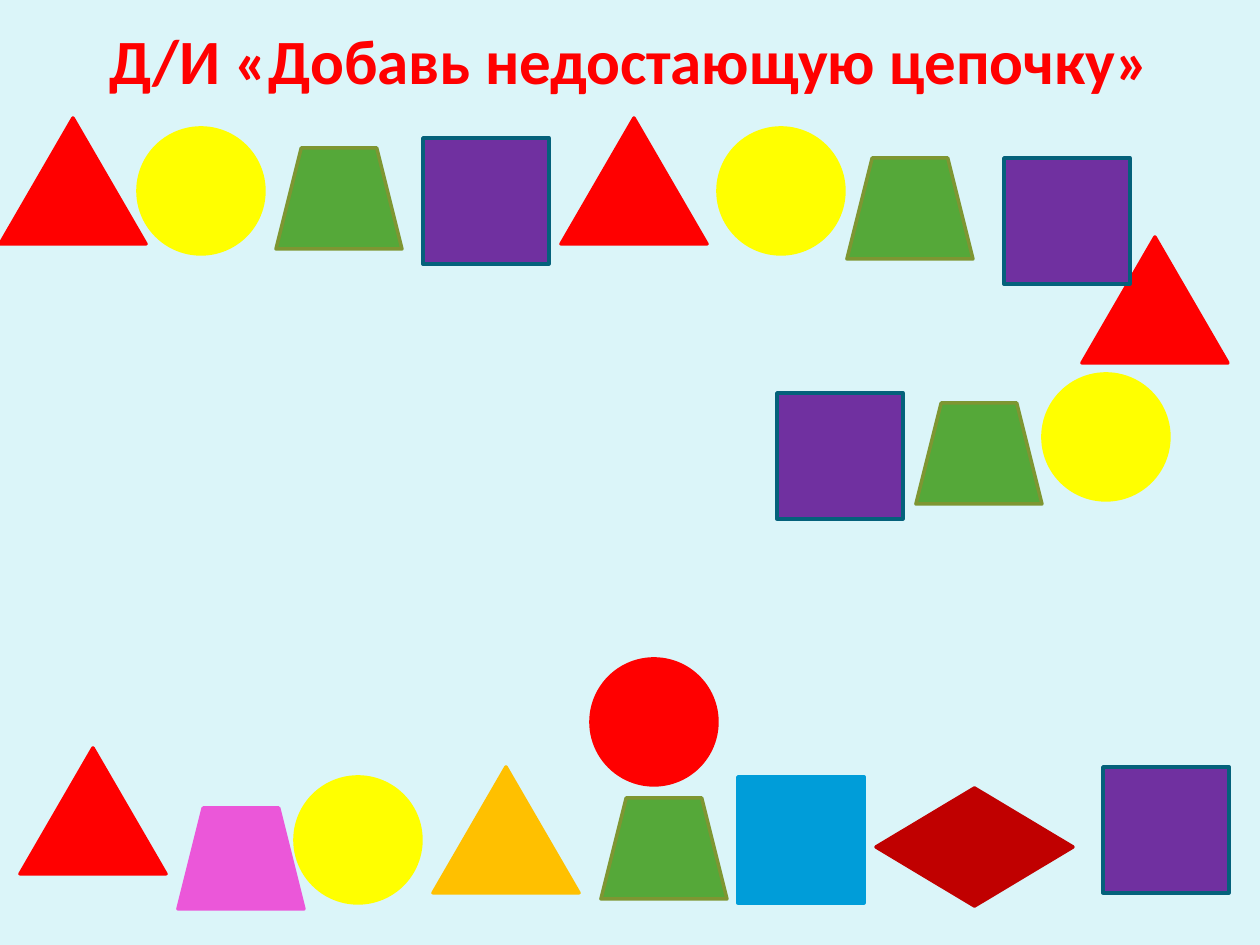
from collections import namedtuple

from lxml import etree
from pptx import Presentation
from pptx.dml.color import RGBColor
from pptx.enum.shapes import MSO_SHAPE as SHAPE
from pptx.enum.text import MSO_ANCHOR, PP_ALIGN
from pptx.oxml.ns import qn
from pptx.util import Pt

PX = 914400 // 126

Box = namedtuple("Box", "x y w h")
Piece = namedtuple("Piece", "kind w h fill line")

RED_TRIANGLE = Piece(SHAPE.ISOSCELES_TRIANGLE, 146, 126, "FF0000", "FF0000")
PURPLE_SQUARE = Piece(SHAPE.RECTANGLE, 126, 126, "7030A0", "04617B")
YELLOW_CIRCLE = Piece(SHAPE.OVAL, 126, 126, "FFFF00", "FFFF00")
GREEN_TRAPEZOID = Piece(SHAPE.TRAPEZOID, 126, 101, "55A839", "7E9632")
PINK_TRAPEZOID = GREEN_TRAPEZOID._replace(fill="EB57D9", line="EB57D9")
ORANGE_TRIANGLE = RED_TRIANGLE._replace(fill="FFC000", line="FFC000")
RED_CIRCLE = YELLOW_CIRCLE._replace(fill="FF0000", line="FF0000")
BLUE_SQUARE = PURPLE_SQUARE._replace(fill="009DD9", line="009DD9")
DARK_DIAMOND = Piece(SHAPE.FLOWCHART_DECISION, 197, 118, "C00000", "C00000")


def color(value):
    return RGBColor.from_string(value)


def add_piece(s, piece, x, y):
    sp = s.shapes.add_shape(piece.kind, x * PX, y * PX, piece.w * PX, piece.h * PX)
    sp.shadow.inherit = False
    sp.fill.solid()
    sp.fill.fore_color.rgb = color(piece.fill)
    sp.line.color.rgb = color(piece.line)
    sp.line.width = Pt(2)
    etree.SubElement(sp.line._get_or_add_ln(), qn("a:round"))


def add_title(s, box, text):
    sp = s.shapes.add_textbox(*(n * PX for n in box))
    tf = sp.text_frame
    tf.word_wrap = True
    tf.vertical_anchor = MSO_ANCHOR.MIDDLE
    tf.text = text
    p = tf.paragraphs[0]
    p.alignment = PP_ALIGN.CENTER
    font = p.runs[0].font
    font.name = "Calibri"
    font.size = Pt(36)
    font.bold = True
    font.color.rgb = color("FF0000")


def add_chain(s, box):
    spots = [
        (RED_TRIANGLE, [(0, 0), (561, 0), (1082, 119)]),
        (PURPLE_SQUARE, [(423, 20), (1004, 40), (777, 275)]),
        (YELLOW_CIRCLE, [(138, 10), (718, 10), (1043, 256)]),
        (GREEN_TRAPEZOID, [(276, 30), (847, 40), (916, 285)]),
    ]
    for piece, points in spots:
        for x, y in points:
            add_piece(s, piece, box.x + x, box.y + y)


def add_choices(s, box):
    spots = [
        (RED_TRIANGLE, 0, 89),
        (PINK_TRAPEZOID, 158, 149),
        (YELLOW_CIRCLE, 275, 118),
        (ORANGE_TRIANGLE, 413, 108),
        (RED_CIRCLE, 571, 0),
        (GREEN_TRAPEZOID, 581, 139),
        (BLUE_SQUARE, 718, 118),
        (DARK_DIAMOND, 856, 129),
        (PURPLE_SQUARE, 1083, 108),
    ]
    for piece, x, y in spots:
        add_piece(s, piece, box.x + x, box.y + y)


def main():
    prs = Presentation()
    prs.slide_width = 1260 * PX
    prs.slide_height = 945 * PX
    s = prs.slides.add_slide(prs.slide_layouts[6])
    s.background.fill.solid()
    s.background.fill.fore_color.rgb = color("DBF5F9")
    add_title(s, Box(63, 20, 1134, 78), "Д/И «Добавь недостающую цепочку»")
    add_chain(s, Box(0, 118, 1228, 401))
    add_choices(s, Box(20, 659, 1209, 250))
    prs.save("out.pptx")


if __name__ == "__main__":
    main()
